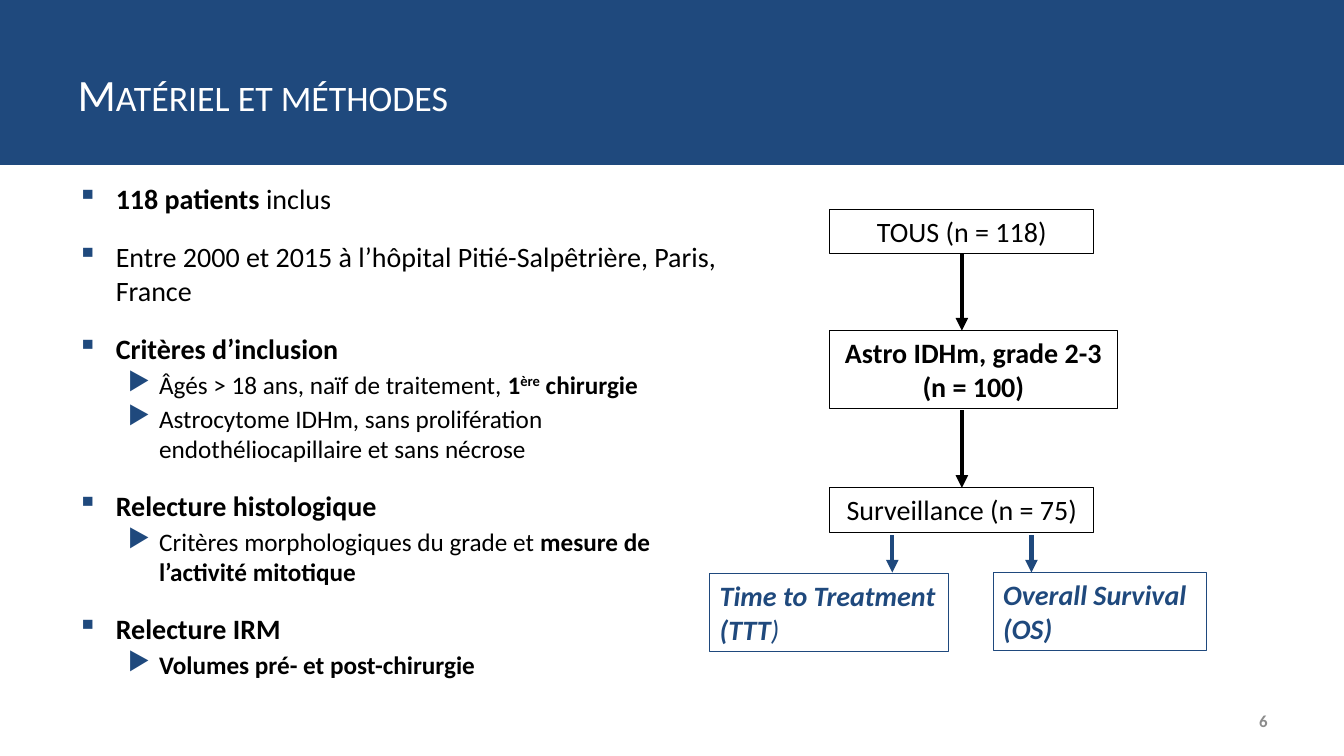
from dataclasses import dataclass

from lxml import etree
from pptx import Presentation
from pptx.dml.color import RGBColor
from pptx.enum.shapes import MSO_CONNECTOR, MSO_SHAPE
from pptx.enum.text import MSO_ANCHOR, MSO_AUTO_SIZE, PP_ALIGN
from pptx.oxml.ns import qn
from pptx.util import Inches, Pt

LEFT, CENTER, RIGHT = PP_ALIGN.LEFT, PP_ALIGN.CENTER, PP_ALIGN.RIGHT
MIDDLE = MSO_ANCHOR.MIDDLE
TOP = MSO_ANCHOR.TOP
FIT_SHAPE = MSO_AUTO_SIZE.SHAPE_TO_FIT_TEXT
RECTANGLE = MSO_SHAPE.RECTANGLE
STRAIGHT = MSO_CONNECTOR.STRAIGHT
SIDE_TOP, SIDE_BOTTOM = 0, 2


@dataclass(frozen=True)
class Theme:
    font: str = "Calibri"
    blue: RGBColor = RGBColor(0x1F, 0x49, 0x7D)
    black: RGBColor = RGBColor(0, 0, 0)
    white: RGBColor = RGBColor(255, 255, 255)
    gray: RGBColor = RGBColor(0x8C, 0x8C, 0x8C)
    title: int = 32
    main: int = 20
    detail: int = 18
    number: int = 12


THEME = Theme()

BULLETS = [
    (0, [("118 patients ", "b"), ("inclus", "")]),
    (0, [("Entre 2000 et 2015 à l’hôpital Pitié-Salpêtrière, Paris, France", "")]),
    (0, [("Critères d’inclusion", "b")]),
    (1, [("Âgés > 18 ans, naïf de traitement, ", ""), ("1", "b"),
         ("ère", "b^"), (" chirurgie", "b")]),
    (1, [("Astrocytome IDHm, sans prolifération endothéliocapillaire et sans nécrose", "")]),
    (0, [("Relecture histologique", "b")]),
    (1, [("Critères morphologiques du grade et ", ""),
         ("mesure de l’activité mitotique", "b")]),
    (0, [("Relecture IRM", "b")]),
    (1, [("Volumes pré- et post-chirurgie", "b")]),
]


def write_spans(para, spans, size, color):
    for text, style in spans:
        span = para.add_run()
        span.text = text
        span.font.name = THEME.font
        span.font.size = Pt(size)
        span.font.color.rgb = color
        span.font.bold = "b" in style
        span.font.italic = "i" in style
        if "^" in style:
            span.font._element.set("baseline", "30000")


def set_bullet(para, level):
    margin, hanging, symbol = [(0.38, 0.38, "▪"), (0.81, 0.31, "▶")][level]
    props = para._p.get_or_add_pPr()
    props.set("marL", str(Inches(margin)))
    props.set("indent", str(-Inches(hanging)))
    color = etree.SubElement(props, qn("a:buClr"))
    etree.SubElement(color, qn("a:srgbClr")).set("val", str(THEME.blue))
    etree.SubElement(props, qn("a:buChar")).set("char", symbol)


def add_header(page, left, top, width, height):
    band = page.shapes.add_shape(RECTANGLE, Inches(left), Inches(top),
                                 Inches(width), Inches(height))
    band.shadow.inherit = False
    band.fill.solid()
    band.fill.fore_color.rgb = THEME.blue
    band.line.color.rgb = THEME.blue
    band.line.width = Pt(2)

    title = page.shapes.title
    title.element.addprevious(band.element)
    title.left, title.top = Inches(left + 0.67), Inches(top + 0.3)
    title.width, title.height = Inches(width - 1.33), Inches(height - 0.37)
    title.text_frame.text = "Matériel et méthodes"
    title.text_frame.vertical_anchor = MIDDLE
    para = title.text_frame.paragraphs[0]
    para.alignment = LEFT
    font = para.runs[0].font
    font.name = THEME.font
    font.size = Pt(THEME.title)
    font.color.rgb = THEME.white
    font._element.set("cap", "small")


def add_bullets(page, left, top, width, height):
    box = page.shapes.add_textbox(Inches(left), Inches(top), Inches(width), Inches(height))
    frame = box.text_frame
    frame.word_wrap = True
    for index, (level, spans) in enumerate(BULLETS):
        para = frame.add_paragraph() if index else frame.paragraphs[0]
        para.level = level
        para.space_before = Pt((17.5, 3)[level] if index else 0)
        set_bullet(para, level)
        write_spans(para, spans, (THEME.main, THEME.detail)[level], THEME.black)


def add_step(page, left, top, width, height, lines, color, centered):
    step = page.shapes.add_shape(RECTANGLE, Inches(left), Inches(top),
                                 Inches(width), Inches(height))
    step.shadow.inherit = False
    step.fill.background()
    step.line.color.rgb = color
    step.line.width = Pt(0.75)
    frame = step.text_frame
    frame.word_wrap = True
    frame.auto_size = FIT_SHAPE
    frame.vertical_anchor = TOP
    frame.margin_left = frame.margin_right = Inches(0.05 if centered else 0.1)
    frame.margin_top = frame.margin_bottom = Inches(0.05)
    for index, spans in enumerate(lines):
        para = frame.add_paragraph() if index else frame.paragraphs[0]
        para.alignment = CENTER if centered else LEFT
        write_spans(para, spans, THEME.main, color)
    return step


def add_arrow(page, x, top, bottom, color):
    arrow = page.shapes.add_connector(STRAIGHT, Inches(x), Inches(top),
                                      Inches(x), Inches(bottom))
    arrow.line.color.rgb = color
    arrow.line.width = Pt(3)
    etree.SubElement(arrow.line._get_or_add_ln(), qn("a:tailEnd")).set("type", "triangle")
    etree.SubElement(arrow.element.spPr, qn("a:effectLst"))
    return arrow


def add_flow(page, left, top):
    step_left, step_width, one_line, two_lines = left + 1.19, 2.62, 0.44, 0.77
    middle = step_left + step_width / 2
    everyone = add_step(page, step_left, top, step_width, one_line,
                        [[("TOUS (n = 118)", "")]], THEME.black, True)
    add_step(page, step_left, top + 1.2, 2.85, two_lines,
             [[("Astro IDHm, grade 2-3", "b")], [("(n = 100)", "b")]], THEME.black, True)
    followed = add_step(page, step_left, top + 2.76, step_width, one_line,
                        [[("Surveillance (n = 75)", "")]], THEME.black, True)

    add_arrow(page, middle, top + one_line, top + 1.2,
              THEME.black).begin_connect(everyone, SIDE_BOTTOM)
    add_arrow(page, middle, top + 1.99, top + 2.76,
              THEME.black).end_connect(followed, SIDE_TOP)

    outcomes = [
        (0, 3.61, 2.37, [("Time to Treatment (TTT", "bi"), (")", "i")]),
        (2.81, 3.6, 2.12, [("Overall Survival (OS)", "bi")]),
    ]
    for offset, drop, width, spans in outcomes:
        add_step(page, left + offset, top + drop, width, two_lines,
                 [spans], THEME.blue, False)
    for x in (middle - 0.69, middle + 0.69):
        add_arrow(page, x, top + 3.23, top + 3.6, THEME.blue)


def add_page_number(page, left, top, width, height):
    box = page.shapes.add_textbox(Inches(left), Inches(top), Inches(width), Inches(height))
    box.text_frame.word_wrap = True
    box.text_frame.vertical_anchor = MIDDLE
    para = box.text_frame.paragraphs[0]
    para.alignment = RIGHT
    write_spans(para, [("6", "b")], THEME.number, THEME.gray)


def main():
    deck = Presentation()
    deck.slide_width, deck.slide_height = Inches(13.33), Inches(7.5)
    page = deck.slides.add_slide(deck.slide_layouts[5])
    add_header(page, 0, 0, 13.33, 1.62)
    add_bullets(page, 0.67, 1.75, 6.8, 4.95)
    add_flow(page, 7.04, 2.08)
    add_page_number(page, 9.56, 6.95, 3.11, 0.4)
    deck.save("out.pptx")


if __name__ == "__main__":
    main()
